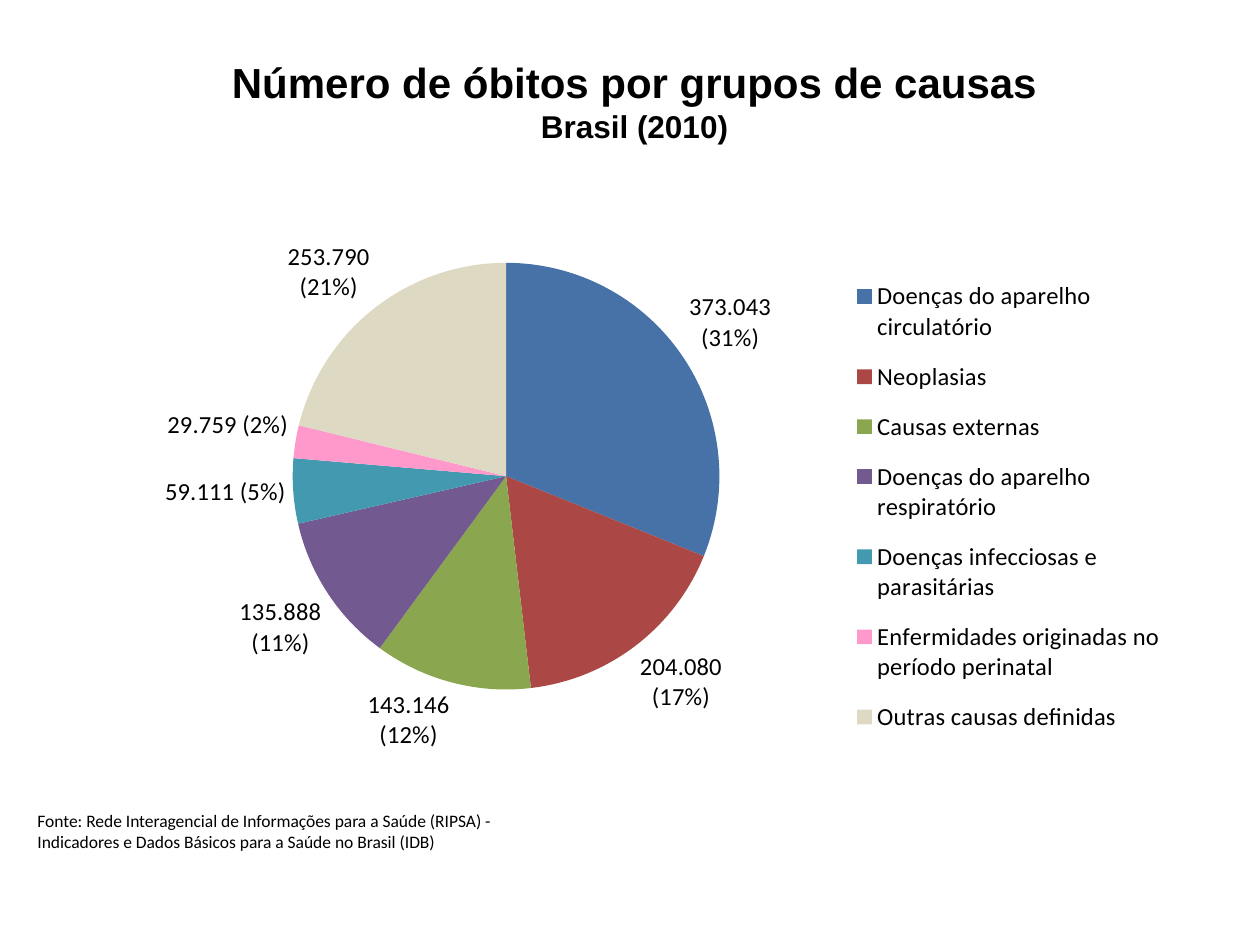
from pptx import Presentation
from pptx.chart.data import CategoryChartData as Data
from pptx.dml.color import RGBColor as Rgb
from pptx.enum.chart import XL_CHART_TYPE as Kind, XL_LABEL_POSITION as Spot
from pptx.enum.chart import XL_LEGEND_POSITION as Side
from pptx.enum.text import MSO_ANCHOR as Anchor, PP_ALIGN as Align
from pptx.oxml import parse_xml
from pptx.oxml.ns import nsdecls
from pptx.util import Pt

# Content
TITLE = [("Número de óbitos por grupos de causas", 24), ("Brasil (2010)", 18)]
NOTE = [("Fonte: Rede Interagencial de Informações para a Saúde (RIPSA) -", 10),
        ("Indicadores e Dados Básicos para a Saúde no Brasil (IDB)", 10)]
# Cause, deaths, label lines, fill (None takes the theme accent)
CAUSES = [
    ("Doenças do aparelho circulatório", 373043, ["373.043", "(31%)"], None),
    ("Neoplasias", 204080, ["204.080", "(17%)"], None),
    ("Causas externas", 143146, ["143.146", "(12%)"], None),
    ("Doenças do aparelho respiratório", 135888, ["135.888", "(11%)"], None),
    ("Doenças infecciosas e parasitárias", 59111, ["59.111 (5%)"], None),
    ("Enfermidades originadas no período perinatal", 29759, ["29.759 (2%)"], "pink"),
    ("Outras causas definidas", 253790, ["253.790", "(21%)"], "sand"),
]
HUES = {"pink": "FF99CC", "sand": "DDD9C3", "black": "000000"}

# Places in px: left, top, width, height
SLIDE = (1260, 945)
HEAD = (213, 36, 843, 129)
CHART = (105, 204, 1071, 566)
PIE = (292, 263, 427, 427)
KEY = (847, 262, 322, 490)
FOOT = (25, 810, 486, 59)
SCALE = 914400 / 126


def emu(box):
    return [round(n * SCALE) for n in box]


def style(font, **look):
    for name, value in look.items():
        setattr(font, name, value)
    font.color.rgb = Rgb.from_string(HUES["black"])


def write(para, lines, **look):
    for i, (text, size) in enumerate(lines):
        if i:
            para.add_line_break()
        run = para.add_run()
        run.text = text
        style(run.font, size=Pt(size), **look)


def layout(box, inner=False):
    left, top, wide, high = CHART
    x, y, w, h = box
    part = {"x": (x - left) / wide, "y": (y - top) / high, "w": w / wide, "h": h / high}
    tags = '<c:layoutTarget val="inner"/>' if inner else ""
    tags += "".join(f'<c:{k}Mode val="edge"/>' for k in "xy")
    tags += "".join(f'<c:{k} val="{v:.3f}"/>' for k, v in part.items())
    return parse_xml(f'<c:layout {nsdecls("c")}><c:manualLayout>{tags}'
                     "</c:manualLayout></c:layout>")


def place(parent, node, after=None):
    for old in parent.findall(node.tag):
        parent.remove(old)
    if after is None:
        parent.insert(0, node)
    else:
        after.addnext(node)


deck = Presentation()
deck.slide_width, deck.slide_height = emu(SLIDE)
slide = deck.slides.add_slide(deck.slide_layouts[5])

# Title
head = slide.shapes.title
head.left, head.top, head.width, head.height = emu(HEAD)
head.text_frame.vertical_anchor = Anchor.MIDDLE
para = head.text_frame.paragraphs[0]
para.alignment = Align.CENTER
para.space_after = Pt(6)
write(para, TITLE, name="Arial", bold=True)

# Pie chart
data = Data(number_format="#,##0")
data.categories = [row[0] for row in CAUSES]
data.add_series("Series 1", [row[1] for row in CAUSES])
chart = slide.shapes.add_chart(Kind.PIE, *emu(CHART), data).chart
chart.has_title = False
style(chart.font, name="Calibri", size=Pt(10))
plot = chart.plots[0]
plot.vary_by_categories = True
place(plot._element.getparent(), layout(PIE, True))

# Labels of the whole series
pie = plot.series[0]
tags = pie.data_labels
for name, value in {"show_value": True, "number_format": "#,##0",
                    "number_format_is_linked": False,
                    "position": Spot.OUTSIDE_END}.items():
    setattr(tags, name, value)
style(tags.font, name="Calibri", size=Pt(14), bold=True)

# Slices and their own labels
for i, (_, _, lines, hue) in enumerate(CAUSES):
    if hue:
        fill = pie.points[i].format.fill
        fill.solid()
        fill.fore_color.rgb = Rgb.from_string(HUES[hue])
    label = pie.points[i].data_label
    frame = label.text_frame
    for j, text in enumerate(lines):
        para = frame.add_paragraph() if j else frame.paragraphs[0]
        write(para, [(text, 14)], name="Calibri", bold=False)
    label.position = Spot.OUTSIDE_END

# Legend
chart.has_legend = True
key = chart.legend
key.position = Side.RIGHT
key.include_in_layout = False
style(key.font, name="Calibri", size=Pt(14))
place(key._element, layout(KEY), key._element.find("{*}legendPos"))

# Source note
frame = slide.shapes.add_textbox(*emu(FOOT)).text_frame
for name, value in {"word_wrap": True, "margin_top": 0, "margin_bottom": 0}.items():
    setattr(frame, name, value)
write(frame.paragraphs[0], NOTE, name="Calibri")

deck.save("out.pptx")
